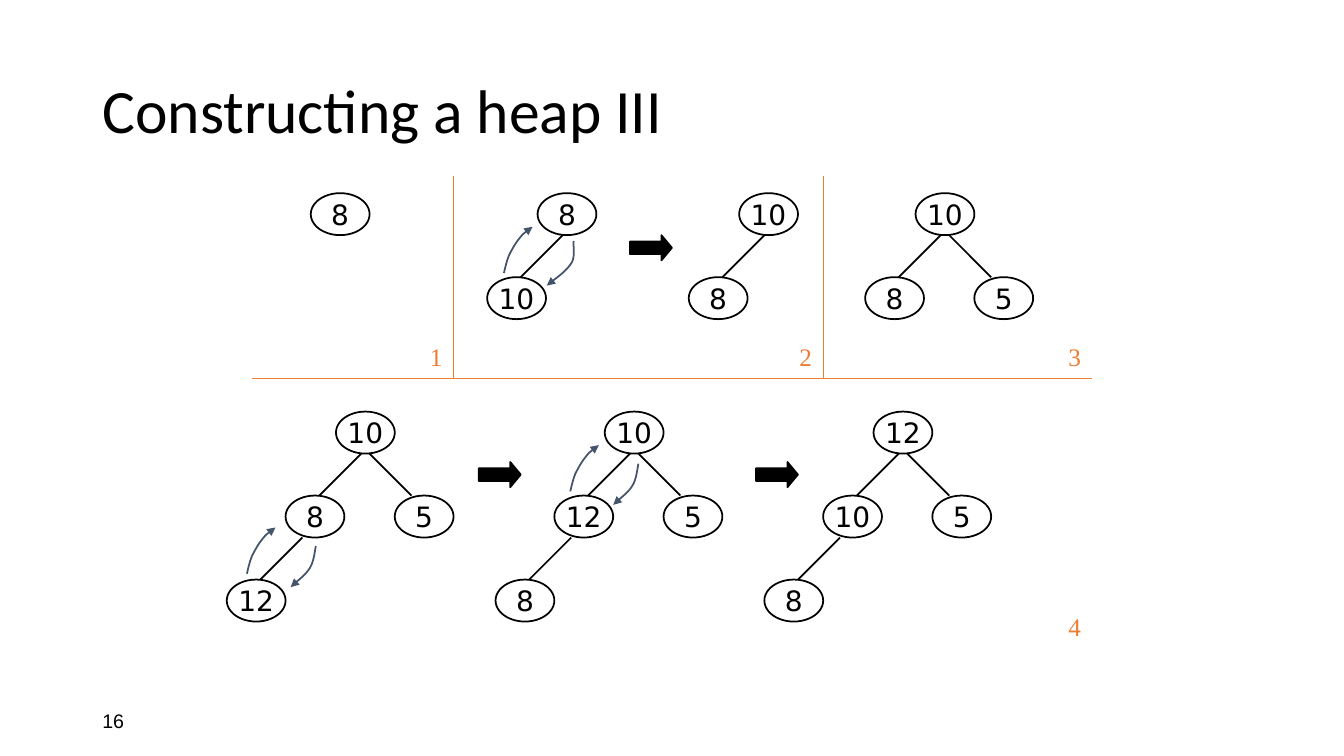
from lxml import etree
from pptx import Presentation, util as u
from pptx.dml import color
from pptx.enum import shapes, text
from pptx.oxml import ns

COLORS = {"ink": "000000", "accent": "ED7D31", "swap": "44546A"}
STYLES = {
    "title": {"name": "Calibri", "size": u.Pt(44), "ink": "ink", "align": "LEFT", "anchor": "MIDDLE"},
    "node": {"name": "DejaVu Sans", "size": u.Pt(20), "ink": "ink", "align": "CENTER", "anchor": "MIDDLE"},
    "step": {"name": "Times New Roman", "size": u.Pt(18), "ink": "accent", "align": "LEFT", "anchor": "TOP"},
    "page": {"name": "Arial", "size": u.Pt(14), "ink": "ink", "align": "LEFT", "anchor": "MIDDLE"},
}


def grid(*steps):
    """Turn grid steps, twelve to 2.54 cm, into lengths."""
    return [u.Cm(step * 2.54 / 12) for step in steps]


def write(shape, words, style_name, wrap=True):
    style = STYLES[style_name]
    frame = shape.text_frame
    frame.text = words
    frame.word_wrap = wrap
    frame.auto_size = text.MSO_AUTO_SIZE.NONE
    frame.vertical_anchor = text.MSO_ANCHOR[style["anchor"]]
    paragraph = frame.paragraphs[0]
    paragraph.alignment = text.PP_ALIGN[style["align"]]
    for key in ("name", "size"):
        setattr(paragraph.font, key, style[key])
    paragraph.font.color.rgb = color.RGBColor.from_string(COLORS[style["ink"]])
    return paragraph


presentation = Presentation()
presentation.slide_width, presentation.slide_height = grid(160, 90)
slide = presentation.slides.add_slide(presentation.slide_layouts[5])

# Title and page number
title = slide.shapes.title
title.left, title.top, title.width, title.height = grid(11, 4.8, 138, 17.4)
write(title, "Constructing a heap III", "title").line_spacing = 0.9
write(slide.shapes.add_textbox(*grid(11, 83.4, 36, 4.8)), "16", "page")

# Dividers between the steps: start, end, colour, width
lines = [
    (30, 45, 130, 45, "accent", 0.5),
    (54, 21, 54, 45, "accent", 0.5),
    (98, 21, 98, 45, "accent", 0.5),
]

# Heaps: left and top of the root, then the values in level order
heaps = [
    (37, 23, [8]),
    (64, 23, [8, 10]),
    (88, 23, [10, 8]),
    (109, 23, [10, 8, 5]),
    (40, 49, [10, 8, 5, 12]),
    (72, 49, [10, 12, 5, 8]),
    (104, 49, [12, 10, 5, 8]),
]
node_offsets = [(0, 0), (-6, 10), (7, 10), (-13, 20)]
edge_offsets = [None, (3, 5, -2, 10), (4, 5, 9, 10), (-4, 15, -9, 20)]
for left, top, values in heaps:
    for value, (dx, dy), edge in zip(values, node_offsets, edge_offsets):
        node = slide.shapes.add_shape(shapes.MSO_SHAPE.OVAL, *grid(left + dx, top + dy, 7, 5))
        node.shadow.inherit = False
        node.fill.background()
        node.line.color.rgb = color.RGBColor.from_string(COLORS["ink"])
        node.line.width = u.Pt(1.25)
        write(node, str(value), "node", wrap=False)
        if edge:
            x1, y1, x2, y2 = edge
            lines.append((left + x1, top + y1, left + x2, top + y2, "ink", 1.25))

for x1, y1, x2, y2, ink, width in lines:
    connector = slide.shapes.add_connector(shapes.MSO_CONNECTOR.STRAIGHT, *grid(x1, y1, x2, y2))
    connector.line.color.rgb = color.RGBColor.from_string(COLORS[ink])
    connector.line.width = u.Pt(width)
    etree.SubElement(connector._element.spPr, ns.qn("a:effectLst"))

# Block arrows between stages
for left, top in [(75, 28), (57, 55), (90, 55)]:
    arrow = slide.shapes.add_shape(shapes.MSO_SHAPE.RIGHT_ARROW, *grid(left, top, 5, 3))
    arrow.shadow.inherit = False
    arrow.adjustments[0], arrow.adjustments[1] = 0.5, 0.417
    arrow.fill.solid()
    for paint in (arrow.fill.fore_color, arrow.line.color):
        paint.rgb = color.RGBColor.from_string(COLORS["ink"])
    arrow.line.width = u.Pt(1.25)

# Curved swap arrows: Bézier control points relative to the start
rise = [(0.1, -0.4), (0.3, -1.4), (0.6, -2.1), (1, -2.9), (1.4, -3.6),
        (1.9, -4.2), (2.3, -4.7), (3.1, -5.3), (3.4, -5.5)]
fall = [(-0.1, 0.4), (-0.2, 1.8), (-0.7, 2.6), (-1.2, 3.4), (-2.5, 4.4), (-3, 4.9)]
wide_fall = [(-0.1, 0.4), (0.2, 1.7), (-0.2, 2.5), (-0.8, 3.5), (-2.6, 4.8), (-3.2, 5.3)]
swaps = [
    (60, 32.5, rise), (68.3, 28.7, wide_fall),
    (29.4, 68.3, rise), (37.6, 65, fall),
    (67.9, 58.5, rise), (76, 55.2, fall),
]
for left, top, controls in swaps:
    builder = slide.shapes.build_freeform(*grid(left, top))
    builder.add_line_segments([grid(left + dx, top + dy) for dx, dy in controls], close=False)
    swap = builder.convert_to_shape()
    swap.shadow.inherit = False
    swap.fill.background()
    swap.line.color.rgb = color.RGBColor.from_string(COLORS["swap"])
    swap.line.width = u.Pt(1.25)
    etree.SubElement(swap.line._get_or_add_ln(), ns.qn("a:tailEnd"), type="triangle")
    # Every three points make one cubic curve
    segments = list(swap._element.iter(ns.qn("a:lnTo")))
    for first in range(0, len(segments), 3):
        curve = etree.Element(ns.qn("a:cubicBezTo"))
        segments[first].addprevious(curve)
        for segment in segments[first:first + 3]:
            curve.append(segment[0])
            segment.getparent().remove(segment)

# Step numbers
for number, (left, top) in enumerate([(50, 40), (94, 40), (126, 40), (126, 72.2)], 1):
    write(slide.shapes.add_textbox(*grid(left, top, 5, 4.8)), str(number), "step")

presentation.save("out.pptx")
